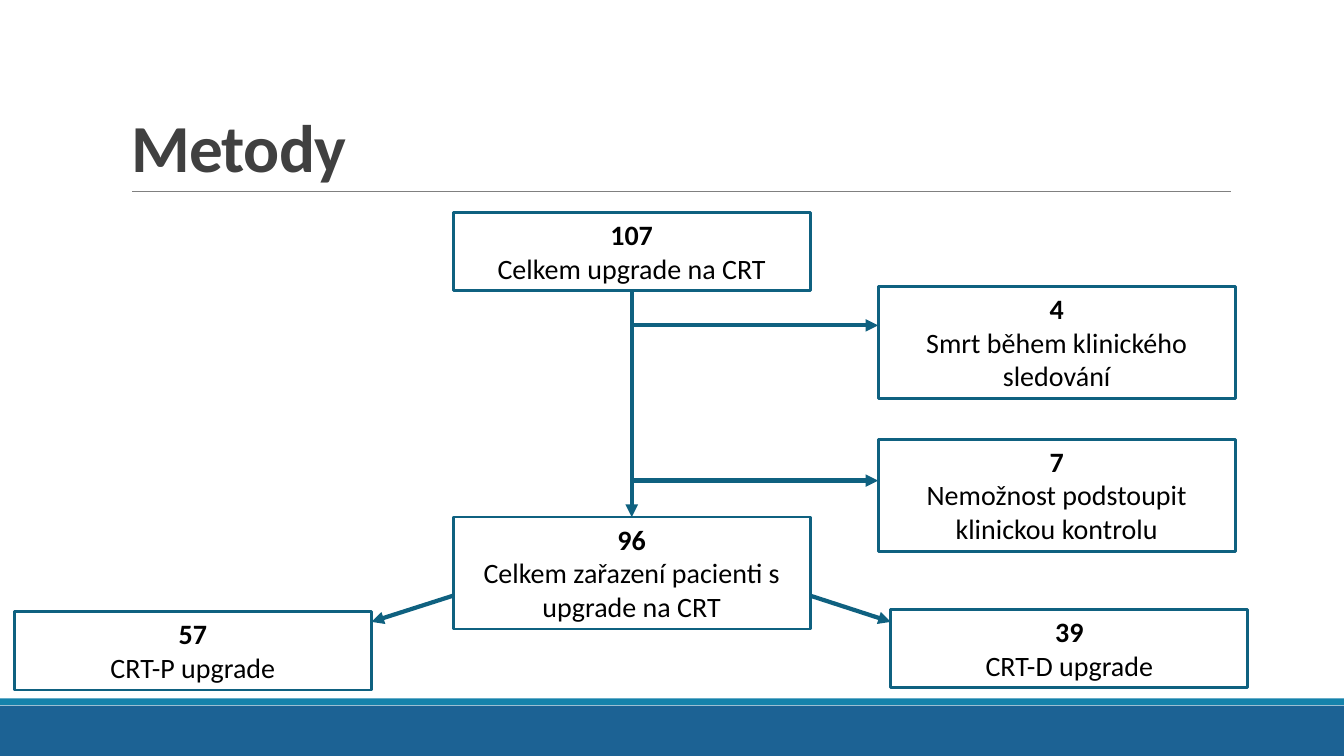
import pptx
import pptx.util
import pptx.dml.color
import pptx.enum.shapes
import pptx.enum.text
import pptx.oxml.ns
import lxml.etree
from dataclasses import dataclass

Cm = pptx.util.Cm
Pt = pptx.util.Pt
qn = pptx.oxml.ns.qn
RGB = pptx.dml.color.RGBColor.from_string
MSO_SHAPE = pptx.enum.shapes.MSO_SHAPE
MSO_CONNECTOR = pptx.enum.shapes.MSO_CONNECTOR
PP_ALIGN = pptx.enum.text.PP_ALIGN
MSO_ANCHOR = pptx.enum.text.MSO_ANCHOR
MSO_AUTO_SIZE = pptx.enum.text.MSO_AUTO_SIZE


@dataclass(frozen=True)
class Theme:
    font: str = "Calibri"
    title_color: str = "404040"
    text_color: str = "000000"
    accent: str = "0F6180"
    rule: str = "808080"
    footer: str = "1C6294"
    footer_edge: str = "1482AB"
    title_size: float = 48
    body_size: float = 20
    box_line: float = 2
    arrow_line: float = 3
    rule_line: float = 0.5


class FlowSlide:
    def __init__(self, slide, theme):
        self.s = slide
        self.theme = theme

    def format_run(self, r, size, color, bold):
        r.font.name = self.theme.font
        r.font.size = Pt(size)
        r.font.bold = bold
        r.font.color.rgb = RGB(color)

    def title(self, text, x, y, w, h):
        sp = self.s.shapes.title
        sp.left, sp.top, sp.width, sp.height = Cm(x), Cm(y), Cm(w), Cm(h)
        tf = sp.text_frame
        tf.text = text
        tf.word_wrap = True
        tf.auto_size = MSO_AUTO_SIZE.NONE
        tf.vertical_anchor = MSO_ANCHOR.BOTTOM
        p = tf.paragraphs[0]
        p.alignment = PP_ALIGN.LEFT
        p.line_spacing = 0.85
        self.format_run(p.runs[0], self.theme.title_size, self.theme.title_color, True)
        for props in sp.element.iter(qn("a:rPr")):
            props.set("spc", "-50")

    def rect(self, x, y, w, h):
        sp = self.s.shapes.add_shape(MSO_SHAPE.RECTANGLE, Cm(x), Cm(y), Cm(w), Cm(h))
        sp.shadow.inherit = False
        return sp

    def band(self, x, y, w, h, color):
        sp = self.rect(x, y, w, h)
        sp.fill.solid()
        sp.fill.fore_color.rgb = RGB(color)
        sp.line.fill.background()

    def box(self, count, label, x, y, w, h):
        sp = self.rect(x, y, w, h)
        sp.fill.background()
        sp.line.color.rgb = RGB(self.theme.accent)
        sp.line.width = Pt(self.theme.box_line)
        tf = sp.text_frame
        tf.text = f"{count}\n{label}"
        tf.word_wrap = True
        tf.auto_size = MSO_AUTO_SIZE.SHAPE_TO_FIT_TEXT
        tf.vertical_anchor = MSO_ANCHOR.TOP
        for p, bold in zip(tf.paragraphs, (True, False)):
            p.alignment = PP_ALIGN.CENTER
            self.format_run(p.runs[0], self.theme.body_size, self.theme.text_color, bold)

    def line(self, x1, y1, x2, y2, color, width):
        cx = self.s.shapes.add_connector(
            MSO_CONNECTOR.STRAIGHT, Cm(x1), Cm(y1), Cm(x2), Cm(y2))
        cx.line.color.rgb = RGB(color)
        cx.line.width = Pt(width)
        lxml.etree.SubElement(cx.element.spPr, qn("a:effectLst"))
        return cx

    def arrow(self, x1, y1, x2, y2):
        cx = self.line(x1, y1, x2, y2, self.theme.accent, self.theme.arrow_line)
        ln = cx.element.spPr.find(qn("a:ln"))
        lxml.etree.SubElement(ln, qn("a:tailEnd"), type="triangle")


def main():
    prs = pptx.Presentation()
    prs.slide_width, prs.slide_height = Cm(33.87), Cm(19.05)
    theme = Theme()
    flow = FlowSlide(prs.slides.add_slide(prs.slide_layouts[5]), theme)

    flow.band(0, 17.78, 33.87, 1.27, theme.footer)
    flow.band(0, 17.6, 33.87, 0.17, theme.footer_edge)
    flow.line(3.33, 4.82, 31.01, 4.82, theme.rule, theme.rule_line)
    flow.title("Metody", 3.05, 0.79, 27.94, 4.03)

    box_w, two_lines, three_lines = 9, 1.97, 2.82
    main_x, excluded_x, left_x, right_x = 11.42, 22.13, 0.36, 22.45
    total_y, included_y = 5.36, 13.03
    center_x = main_x + box_w / 2

    boxes = [
        ("107", "Celkem upgrade na CRT", main_x, total_y, two_lines),
        ("4", "Smrt během klinického sledování", excluded_x, 7.22, three_lines),
        ("7", "Nemožnost podstoupit klinickou kontrolu", excluded_x, 11.07, three_lines),
        ("96", "Celkem zařazení pacienti s upgrade na CRT", main_x, included_y, three_lines),
        ("57", "CRT-P upgrade", left_x, 15.42, two_lines),
        ("39", "CRT-D upgrade", right_x, 15.36, two_lines),
    ]
    for count, label, x, y, h in boxes:
        flow.box(count, label, x, y, box_w, h)

    flow.arrow(center_x, total_y + two_lines, center_x, included_y)
    for y in (8.2, 12.11):
        flow.arrow(center_x, y, excluded_x, y)
    for start_x, end_x in ((main_x, left_x + box_w), (main_x + box_w, right_x)):
        flow.arrow(start_x, 15.01, end_x, 15.67)

    prs.save("out.pptx")


if __name__ == "__main__":
    main()
